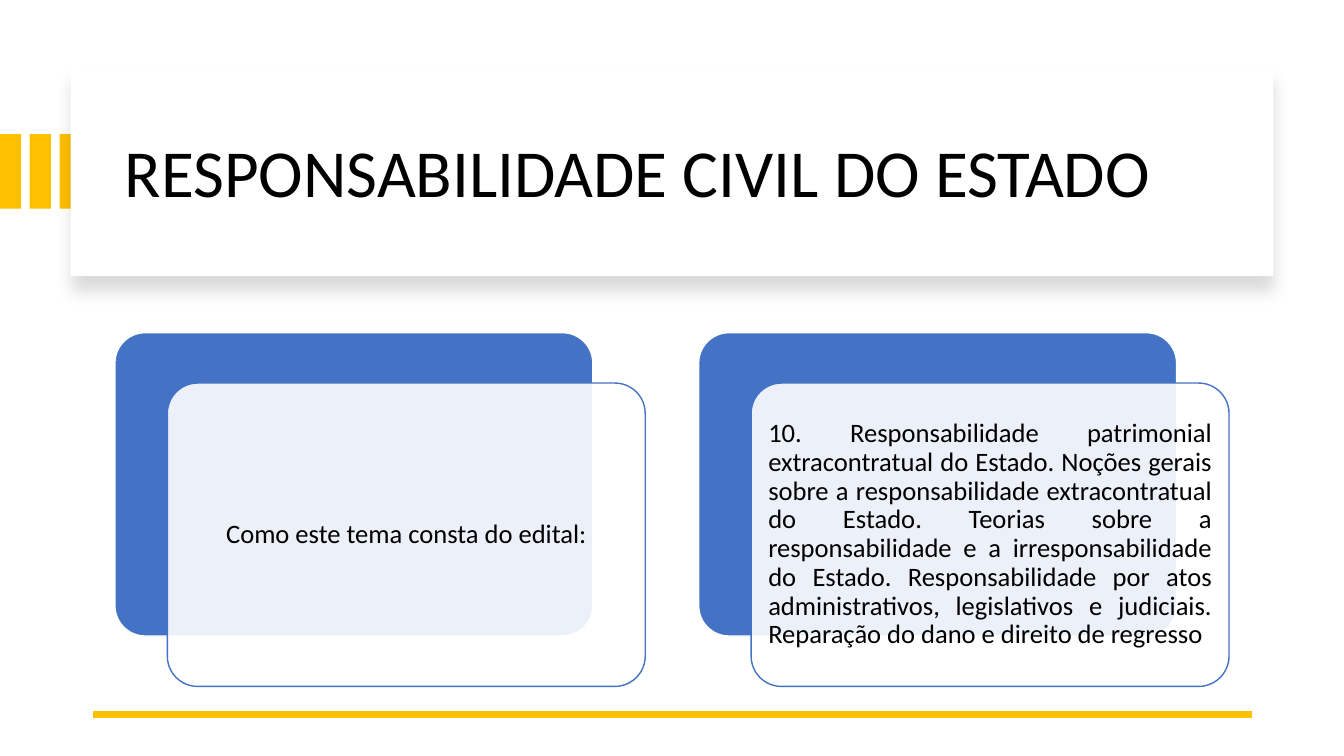
from dataclasses import dataclass

from lxml import etree
from pptx import Presentation
from pptx import util as u
from pptx.dml.color import RGBColor
from pptx.enum import shapes, text
from pptx.oxml.ns import qn


@dataclass(frozen=True)
class Theme:
    font: str = "Calibri"
    title_size: float = 48
    body_size: float = 19
    ink: str = "000000"
    paper: str = "FFFFFF"
    accent: str = "FFC000"
    card: str = "4472C4"


THEME = Theme()
CARDS = [
    ("Como este tema consta do edital:", text.PP_ALIGN.CENTER),
    ("10. Responsabilidade patrimonial extracontratual do Estado. "
     "Noções gerais sobre a responsabilidade extracontratual do Estado. "
     "Teorias sobre a responsabilidade e a irresponsabilidade do Estado. "
     "Responsabilidade por atos administrativos, legislativos e judiciais. "
     "Reparação do dano e direito de regresso", text.PP_ALIGN.JUSTIFY),
]


def inches(*lengths):
    return [u.Inches(length) for length in lengths]


def add_child(parent, tag, **attributes):
    child = etree.SubElement(parent, qn(tag))
    for name, value in attributes.items():
        child.set(name, str(value))
    return child


def add_block(parent, box, fill, kind=shapes.MSO_SHAPE.RECTANGLE,
              line=None, opacity=None, corner=None):
    block = parent.add_shape(kind, *inches(*box))
    block.shadow.inherit = False
    block.fill.solid()
    block.fill.fore_color.rgb = RGBColor.from_string(fill)
    if opacity is not None:
        color = block.fill._xPr.find(qn("a:solidFill"))[0]
        add_child(color, "a:alpha", val=opacity * 1000)
    if line:
        block.line.color.rgb = RGBColor.from_string(line)
        block.line.width = u.Pt(1)
    else:
        block.line.fill.background()
    if corner is not None:
        block.adjustments[0] = corner
    return block


def add_text(parent, box, words, size, align=text.PP_ALIGN.LEFT,
             margins=(0.1, 0.05)):
    frame = parent.add_textbox(*inches(*box)).text_frame
    frame.word_wrap = True
    frame.vertical_anchor = text.MSO_ANCHOR.MIDDLE
    frame.margin_left = frame.margin_right = u.Inches(margins[0])
    frame.margin_top = frame.margin_bottom = u.Inches(margins[1])
    paragraph = frame.paragraphs[0]
    paragraph.alignment = align
    paragraph.line_spacing = 0.9
    run = paragraph.add_run()
    run.text = words
    run.font.name = THEME.font
    run.font.size = u.Pt(size)
    run.font.color.rgb = RGBColor.from_string(THEME.ink)


def add_stripes(slide, left, top, width, height, count=3, step=0.295):
    stripes = slide.shapes.add_group_shape().shapes
    for i in range(count):
        add_block(stripes, (left + i * step, top, width, height), THEME.accent)


def add_title_panel(slide, left, top, width, height):
    panel = add_block(slide.shapes, (left, top, width, height), THEME.paper)
    # Soft shadow straight below the panel
    effects = panel._element.spPr.find(qn("a:effectLst"))
    shadow = add_child(effects, "a:outerShdw", blurRad=u.Pt(11), dist=u.Pt(10),
                       dir=90 * 60000, algn="t", rotWithShape=0)
    color = add_child(shadow, "a:srgbClr", val=THEME.ink)
    add_child(color, "a:alpha", val=15000)
    add_text(slide.shapes, (left + 0.44, top + 0.22, width - 0.8, height - 0.37),
             "RESPONSABILIDADE CIVIL DO ESTADO", THEME.title_size)


def add_rule(slide, left, top, width):
    rule = slide.shapes.add_connector(
        shapes.MSO_CONNECTOR.STRAIGHT, *inches(left + width, top, left, top))
    rule.line.color.rgb = RGBColor.from_string(THEME.accent)
    rule.line.width = u.Pt(4.5)
    add_child(rule._element.spPr, "a:effectLst")


def add_card(parent, left, top, width, height, words, align):
    rounded = shapes.MSO_SHAPE.ROUNDED_RECTANGLE
    add_block(parent, (left, top, width, height), THEME.card, rounded,
              line=THEME.paper, corner=0.1)
    # Translucent front sheet, shifted right and down
    left, top, inset = left + 0.52, top + 0.5, 0.09
    add_block(parent, (left, top, width, height), THEME.paper, rounded,
              line=THEME.card, opacity=90, corner=0.1)
    add_text(parent, (left + inset, top + inset,
                      width - 2 * inset, height - 2 * inset),
             words, THEME.body_size, align, margins=(0.08, 0.08))


def add_cards(slide, left, top, width, height, step=5.79):
    cards = slide.shapes.add_group_shape().shapes
    for i, (words, align) in enumerate(CARDS):
        add_card(cards, left + i * step, top, width, height, words, align)


def main():
    deck = Presentation()
    deck.slide_width, deck.slide_height = inches(13.33, 7.5)
    slide = deck.slides.add_slide(deck.slide_layouts[6])
    slide.background.fill.solid()
    slide.background.fill.fore_color.rgb = RGBColor.from_string(THEME.paper)

    add_stripes(slide, 0, 1.33, 0.21, 0.74)
    add_title_panel(slide, 0.7, 0.67, 11.93, 2.07)
    add_rule(slide, 0.92, 7.09, 11.5)
    add_cards(slide, 1.14, 3.3, 4.74, 3.01)
    deck.save("out.pptx")


if __name__ == "__main__":
    main()
